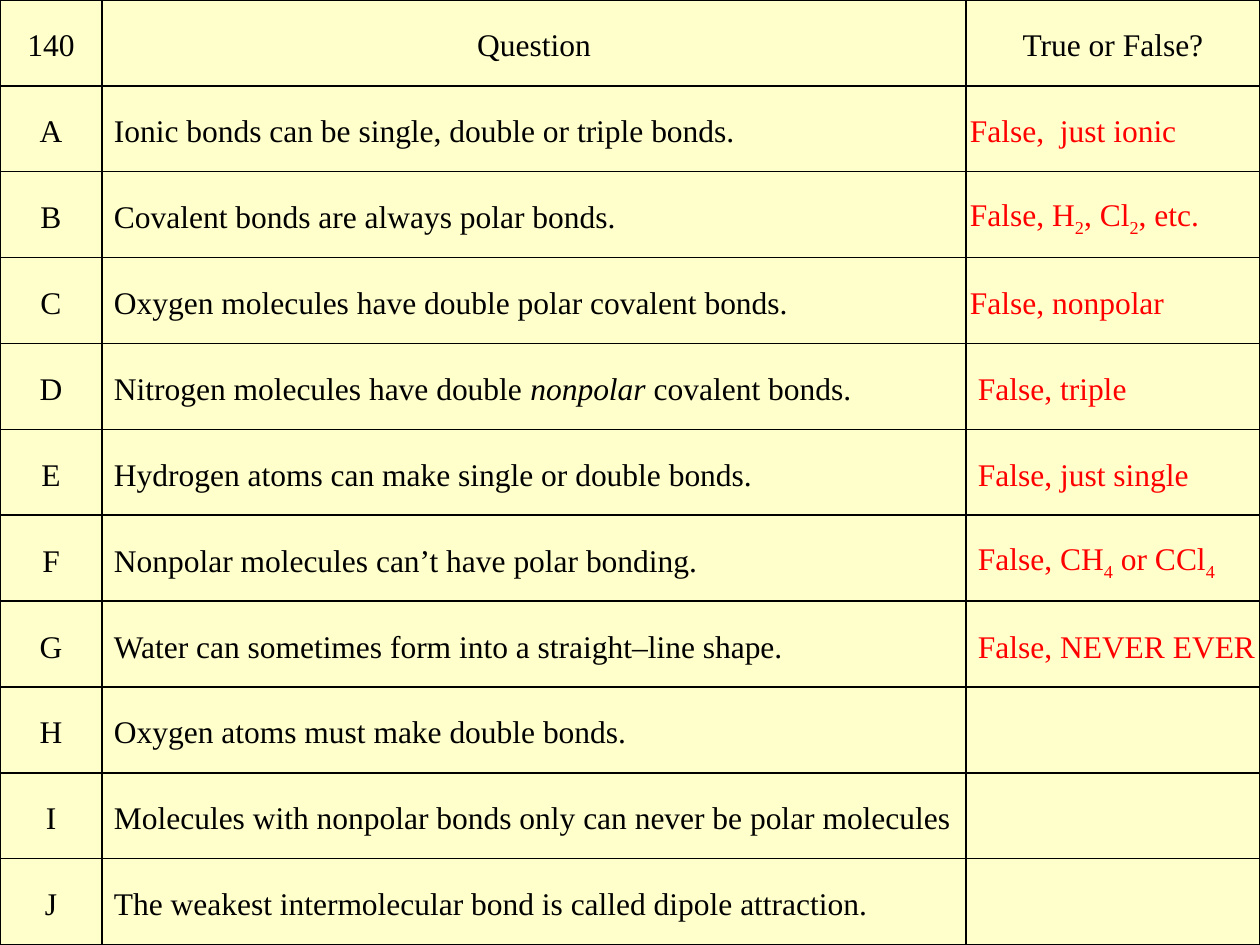
from lxml.etree import SubElement
from pptx import Presentation
from pptx.dml.color import RGBColor
from pptx.enum.text import MSO_ANCHOR, PP_ALIGN
from pptx.oxml.ns import qn
from pptx.util import Pt

EMU_PER_PX = 914400 / 126
SLIDE_WIDTH, SLIDE_HEIGHT = 1260, 945
COLUMN_WIDTHS = (102, 864, 294)
CELL_MARGIN = 4
INDENT = 8
COLORS = {"paper": "FFFFCC", "text": "000000", "answer": "FF0000", "border": "000000"}

HEADER = ("140", "Question", "True or False?")
# Label, question, answer, indent of the answer; *italic* and ~subscript~ mark runs.
QUESTIONS = [
    ("A", "Ionic bonds can be single, double or triple bonds.", "False,  just ionic", 0),
    ("B", "Covalent bonds are always polar bonds.", "False, H~2~, Cl~2~, etc.", 0),
    ("C", "Oxygen molecules have double polar covalent bonds.", "False, nonpolar", 0),
    ("D", "Nitrogen molecules have double *nonpolar* covalent bonds.", "False, triple", INDENT),
    ("E", "Hydrogen atoms can make single or double bonds.", "False, just single", INDENT),
    ("F", "Nonpolar molecules can’t have polar bonding.", "False, CH~4~ or CCl~4~", INDENT),
    ("G", "Water can sometimes form into a straight–line shape.", "False, NEVER EVER", INDENT),
    ("H", "Oxygen atoms must make double bonds.", "", 0),
    ("I", "Molecules with nonpolar bonds only can never be polar molecules", "", 0),
    ("J", "The weakest intermolecular bond is called dipole attraction.", "", 0),
]


def px(length):
    return round(length * EMU_PER_PX)


def split_runs(text):
    """Yield (text, italic, subscript) for each marked or plain part."""
    for i, italic_part in enumerate(text.split("*")):
        for j, part in enumerate(italic_part.split("~")):
            if part:
                yield part, i % 2 == 1, j % 2 == 1


def write_text(cell, text, color="text", align=PP_ALIGN.LEFT, size=18, font="Times New Roman"):
    paragraph = cell.text_frame.paragraphs[0]
    paragraph.alignment = align
    paragraph.line_spacing = 1.19
    paragraph.space_after = Pt(6)
    for part, italic, subscript in split_runs(text):
        run = paragraph.add_run()
        run.text = part
        run.font.name = font
        run.font.size = Pt(size)
        run.font.italic = italic
        run.font.color.rgb = RGBColor.from_string(COLORS[color])
        if subscript:
            run._r.get_or_add_rPr().set("baseline", "-25000")


def style_cell(cell, indent=0):
    cell.vertical_anchor = MSO_ANCHOR.MIDDLE
    cell.margin_right = cell.margin_top = cell.margin_bottom = px(CELL_MARGIN)
    cell.margin_left = px(CELL_MARGIN + indent)
    properties = cell._tc.get_or_add_tcPr()
    for side in ("a:lnL", "a:lnR", "a:lnT", "a:lnB"):
        line = SubElement(properties, qn(side), w=str(Pt(1)))
        fill = SubElement(line, qn("a:solidFill"))
        SubElement(fill, qn("a:srgbClr"), val=COLORS["border"])
    cell.fill.solid()
    cell.fill.fore_color.rgb = RGBColor.from_string(COLORS["paper"])


def add_question_table(slide, left, top, width, height):
    row_count = len(QUESTIONS) + 1
    frame = slide.shapes.add_table(
        row_count, len(COLUMN_WIDTHS), px(left), px(top), px(width), px(height))
    table = frame.table
    table.first_row = table.horz_banding = False
    for column, column_width in zip(table.columns, COLUMN_WIDTHS):
        column.width = px(column_width * width / sum(COLUMN_WIDTHS))
    for row in table.rows:
        row.height = px(height / row_count)

    for column_index, heading in enumerate(HEADER):
        cell = table.cell(0, column_index)
        style_cell(cell)
        write_text(cell, heading, align=PP_ALIGN.CENTER)

    for row_index, (label, question, answer, answer_indent) in enumerate(QUESTIONS, start=1):
        label_cell, question_cell, answer_cell = table.rows[row_index].cells
        style_cell(label_cell)
        write_text(label_cell, label, align=PP_ALIGN.CENTER)
        style_cell(question_cell, INDENT)
        write_text(question_cell, question)
        style_cell(answer_cell, answer_indent)
        write_text(answer_cell, answer, color="answer")


def main():
    presentation = Presentation()
    presentation.slide_width = px(SLIDE_WIDTH)
    presentation.slide_height = px(SLIDE_HEIGHT)
    slide = presentation.slides.add_slide(presentation.slide_layouts[6])
    slide.background.fill.solid()
    slide.background.fill.fore_color.rgb = RGBColor.from_string(COLORS["paper"])
    add_question_table(slide, 0, 0, SLIDE_WIDTH, SLIDE_HEIGHT)
    presentation.save("out.pptx")


if __name__ == "__main__":
    main()
